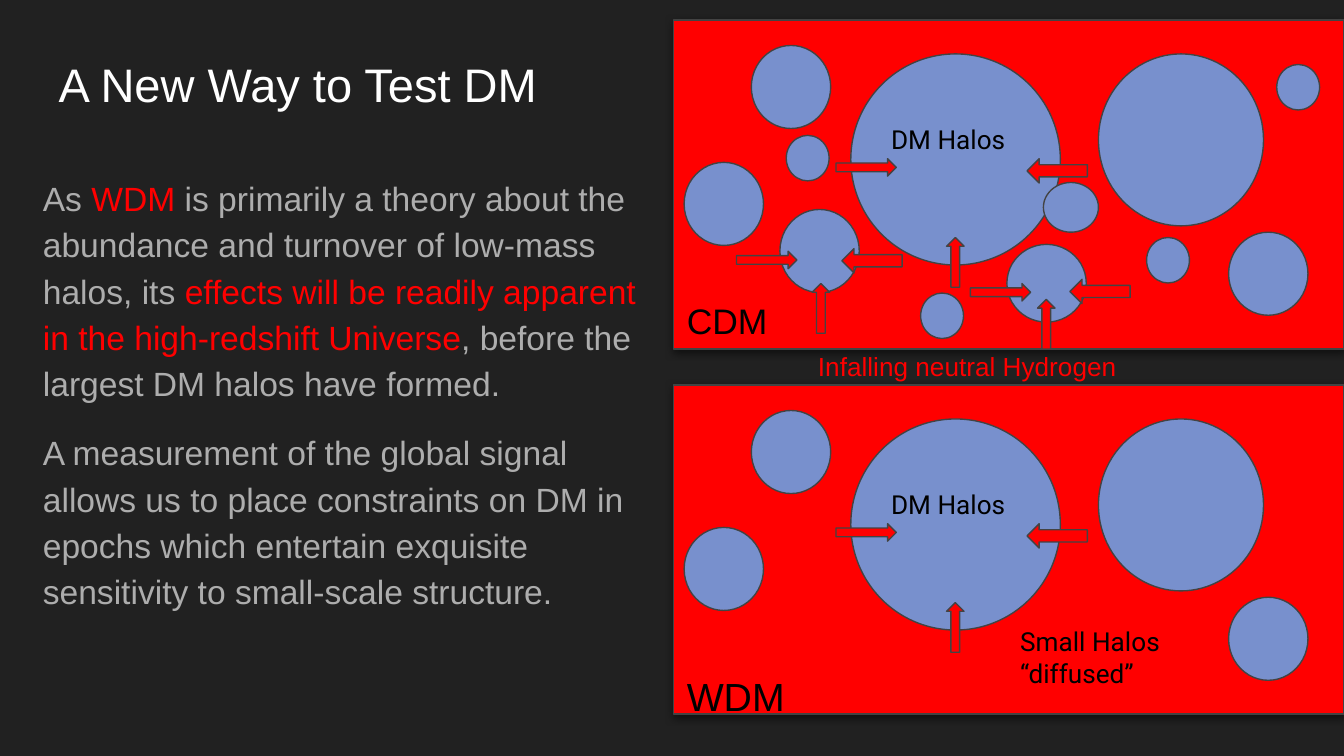
from lxml import etree
from pptx import Presentation
from pptx.dml.color import RGBColor
from pptx.enum.shapes import MSO_SHAPE
from pptx.enum.text import MSO_ANCHOR, MSO_AUTO_SIZE, PP_ALIGN
from pptx.oxml import parse_xml
from pptx.oxml.ns import nsdecls, qn
from pptx.util import Cm, Pt

RECT, OVAL = MSO_SHAPE.RECTANGLE, MSO_SHAPE.OVAL
UP, RIGHT, LEFT = MSO_SHAPE.UP_ARROW, MSO_SHAPE.RIGHT_ARROW, MSO_SHAPE.LEFT_ARROW
TOP, MIDDLE = MSO_ANCHOR.TOP, MSO_ANCHOR.MIDDLE
FIXED, GROW = MSO_AUTO_SIZE.NONE, MSO_AUTO_SIZE.SHAPE_TO_FIT_TEXT
START = PP_ALIGN.LEFT

COLORS = {
    "back": "212121", "white": "FFFFFF", "gray": "ADADAD",
    "red": "FF0000", "blue": "7890CD", "edge": "434343", "black": "000000",
}
INSET = Cm(0.25)
FRAME = {
    "margin_left": INSET, "margin_right": INSET, "margin_top": INSET,
    "margin_bottom": INSET, "word_wrap": True,
}
PLAIN = {"alignment": START, "space_before": Pt(0), "space_after": Pt(0)}
PROSE = {**PLAIN, "line_spacing": 1.15}
LATER = {**PROSE, "space_before": Pt(12), "space_after": Pt(12)}

ARROWS = {UP: (0.33, 0.94), RIGHT: (1.14, 0.33), LEFT: (1.14, 0.46)}
MID, TINY = (1.5, 1.57), (0.81, 0.86)
HALOS = [
    (3.35, 0.64, 3.96, 3.99), (8.03, 0.64, 3.12, 3.25),
    (1.47, 0.48, *MID), (10.49, 4.01, *MID), (0.2, 2.69, *MID),
]
SMALL = [
    (2.01, 3.58, *MID), (6.3, 4.24, 1.5, 1.47), (6.99, 3.07, 1.04, 0.94),
    (4.67, 5.16, *TINY), (8.94, 4.11, *TINY), (11.4, 0.84, *TINY),
    (2.13, 2.18, *TINY),
]
INFLOW = [(UP, 5.16, 4.11), (RIGHT, 3.07, 2.62), (LEFT, 6.68, 2.62)]
MORE = [
    (UP, 2.62, 4.98), (UP, 6.88, 5.28), (RIGHT, 1.19, 4.37),
    (RIGHT, 5.61, 4.98), (LEFT, 7.49, 4.9), (LEFT, 3.18, 4.32),
]


def apply(item, fmt):
    for name, value in fmt.items():
        setattr(item, name, value)


def tint(name):
    return RGBColor.from_string(COLORS[name])


def write(para, runs, size, face, fmt):
    apply(para, fmt)
    for text, color in runs:
        run = para.add_run()
        run.text = text
        apply(run.font, {"size": Pt(size), "name": face})
        run.font.color.rgb = tint(color)


def label(slide, box, text, size, face, color="black"):
    frame = slide.shapes.add_textbox(*map(Cm, box)).text_frame
    apply(frame, {**FRAME, "auto_size": GROW})
    write(frame.paragraphs[0], [(text, color)], size, face, PLAIN)


def draw(slide, kind, box, color):
    shape = slide.shapes.add_shape(kind, *map(Cm, box))
    shape.shadow.inherit = False
    shape.fill.solid()
    shape.fill.fore_color.rgb = tint(color)
    shape.line.color.rgb = tint("edge")
    shape.line.width = Pt(0.75)
    return shape


def shade(shape):
    glow = shape._element.spPr.find(qn("a:effectLst"))
    glow.append(parse_xml(
        f'<a:outerShdw {nsdecls("a")} blurRad="57150" dist="19050" '
        'dir="5400000" algn="bl" rotWithShape="0"><a:srgbClr val="000000">'
        '<a:alpha val="50000"/></a:srgbClr></a:outerShdw>'
    ))


def place(holder, box, anchor):
    apply(holder, dict(zip(("left", "top", "width", "height"), map(Cm, box))))
    frame = holder.text_frame
    apply(frame, {**FRAME, "auto_size": FIXED, "vertical_anchor": anchor})
    return frame


def title(slide, box):
    frame = place(slide.shapes.title, box, MIDDLE)
    write(frame.paragraphs[0], [("A New Way to Test DM", "white")],
          25.2, "Arial", PLAIN)


def body(slide, box):
    frame = place(slide.placeholders[1], box, TOP)
    first = [
        ("As ", "gray"), ("WDM", "red"),
        (" is primarily a theory about the abundance and turnover of "
         "low-mass halos, its ", "gray"),
        ("effects will be readily apparent in the high-redshift Universe",
         "red"),
        (", before the largest DM halos have formed.", "gray"),
    ]
    second = [
        ("A measurement of the global signal allows us to place constraints "
         "on DM in epochs which entertain exquisite sensitivity to "
         "small-scale structure.", "gray"),
    ]
    paras = [frame.paragraphs[0], frame.add_paragraph()]
    for para, runs, fmt in zip(paras, (first, second), (PROSE, LATER)):
        props = para._p.get_or_add_pPr()
        props.set("marL", "0")
        props.set("indent", "0")
        etree.SubElement(props, qn("a:buNone"))
        write(para, runs, 18, "Arial", fmt)


def panel(slide, box, halos, arrows, notes):
    left, top = box[:2]

    def shift(x, y, *size):
        return (left + x, top + y, *size)

    shade(draw(slide, RECT, box, "red"))
    for halo in halos:
        draw(slide, OVAL, shift(*halo), "blue")
    label(slide, shift(3.86, 1.7, 3.61, 1.12), "DM Halos", 14, "Roboto")
    for kind, x, y in arrows:
        draw(slide, kind, shift(x, y, *ARROWS[kind]), "red")
    for spot, text, size, face in notes:
        label(slide, shift(*spot), text, size, face)


def main():
    deck = Presentation()
    deck.slide_width, deck.slide_height = Cm(25.4), Cm(14.29)
    slide = deck.slides.add_slide(deck.slide_layouts[1])
    slide.background.fill.solid()
    slide.background.fill.fore_color.rgb = tint("back")

    title(slide, (0.86, 0.79, 23.67, 1.6))
    body(slide, (0.56, 3, 11.84, 10.31))
    panel(slide, (12.73, 0.38, 12.67, 6.22), HALOS + SMALL, INFLOW + MORE,
          [((0, 5.03, 3.05, 1.32), "CDM", 19, "Arial")])
    panel(slide, (12.73, 7.28, 12.67, 6.22), HALOS, INFLOW,
          [((6.3, 4.3, 3.96, 1.7), "Small Halos “diffused”", 14, "Roboto"),
           ((0, 5.18, 3.05, 1.42), "WDM", 21, "Arial")])
    label(slide, (15.21, 6.38, 6.35, 1.12), "Infalling neutral Hydrogen",
          14, "Arial", "red")
    deck.save("out.pptx")


if __name__ == "__main__":
    main()
